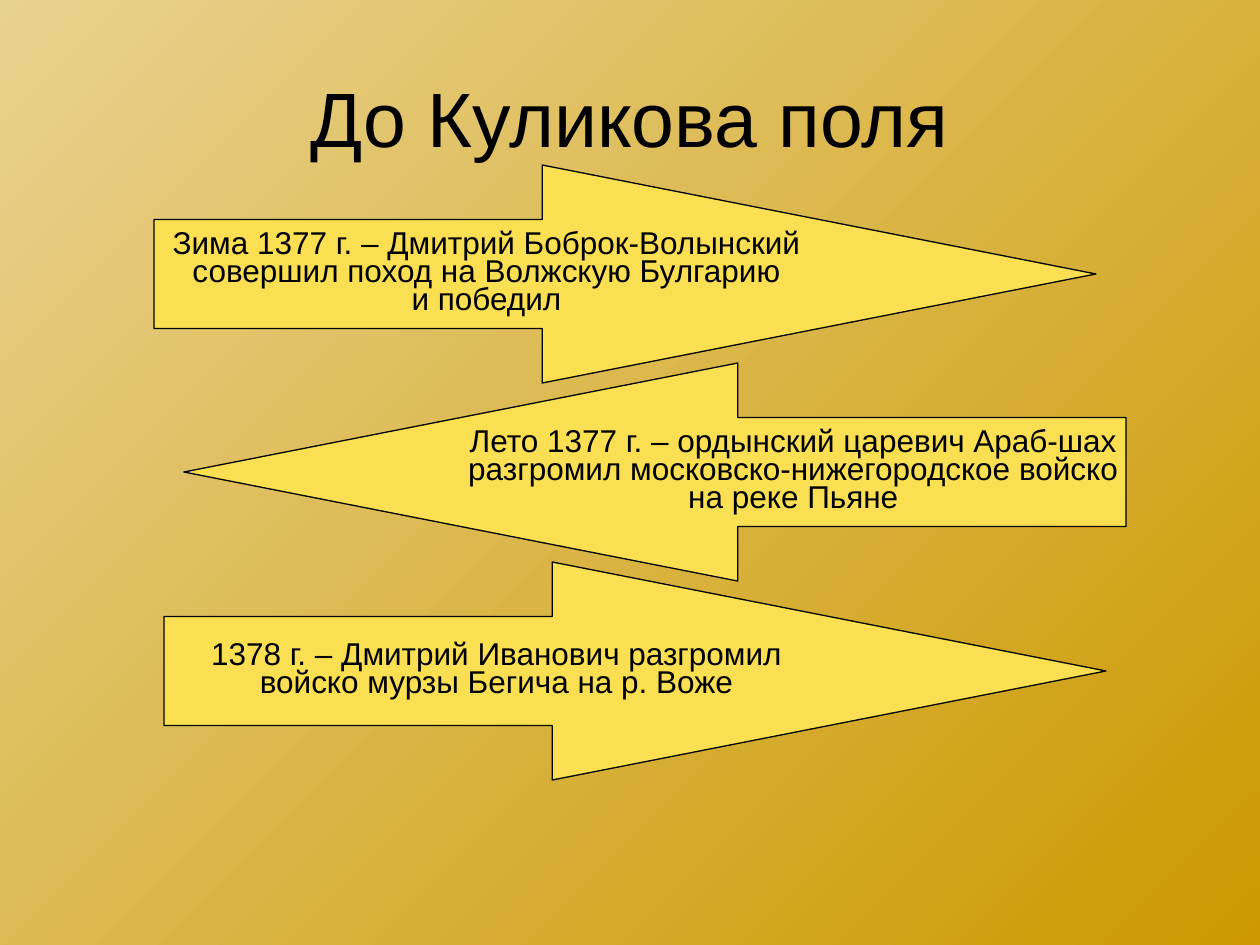
from dataclasses import dataclass

from pptx import Presentation
from pptx.dml.color import RGBColor
from pptx.enum.shapes import MSO_SHAPE
from pptx.enum.text import MSO_ANCHOR, PP_ALIGN
from pptx.util import Emu, Pt

EMU_PER_PX = 914400 / 126
FONT = "Arial"
BLACK = RGBColor(0x00, 0x00, 0x00)
YELLOW = RGBColor(0xFB, 0xDF, 0x53)
PALE_GOLD = RGBColor(0xE9, 0xD2, 0x8F)
DARK_GOLD = RGBColor(0xCC, 0x99, 0x00)

ARROW_W, ARROW_H = 942, 218
SHAFT_RATIO, HEAD_RATIO = 0.5, 2.54


@dataclass(frozen=True)
class EventArrow:
    left: int
    top: int
    lines: tuple[str, ...]
    points_left: bool = False


EVENTS = (
    EventArrow(154, 165, (
        "Зима 1377 г. – Дмитрий Боброк-Волынский",
        "совершил поход на Волжскую Булгарию",
        "и победил",
    )),
    EventArrow(184, 363, (
        "Лето 1377 г. – ордынский царевич Араб-шах",
        "разгромил московско-нижегородское войско",
        "на реке Пьяне",
    ), points_left=True),
    EventArrow(164, 562, (
        "1378 г. – Дмитрий Иванович разгромил",
        "войско мурзы Бегича на р. Воже",
    )),
)


def px(n: int) -> Emu:
    return Emu(round(n * EMU_PER_PX))


def write_text(sp, lines: tuple[str, ...], *, size: int,
               spacing: float = 1.0, wrap: bool = True) -> None:
    """Fill a shape with centred paragraphs, one for each line."""
    tf = sp.text_frame
    tf.word_wrap = wrap
    tf.vertical_anchor = MSO_ANCHOR.MIDDLE
    for i, line in enumerate(lines):
        p = tf.add_paragraph() if i else tf.paragraphs[0]
        p.alignment = PP_ALIGN.CENTER
        p.line_spacing = spacing
        r = p.add_run()
        r.text = line
        r.font.name = FONT
        r.font.size = Pt(size)
        r.font.color.rgb = BLACK


def paint_background(s) -> None:
    fill = s.background.fill
    fill.gradient()
    fill.gradient_angle = 315
    for stop, color in zip(fill.gradient_stops, (PALE_GOLD, DARK_GOLD)):
        stop.color.rgb = color


def add_title(s, text: str) -> None:
    title = s.shapes.title
    title.left, title.top = px(63), px(38)
    title.width, title.height = px(1134), px(157)
    write_text(title, (text,), size=44)


def add_event(s, event: EventArrow) -> None:
    sp = s.shapes.add_shape(MSO_SHAPE.RIGHT_ARROW, px(event.left), px(event.top),
                            px(ARROW_W), px(ARROW_H))
    sp.adjustments[0] = SHAFT_RATIO
    sp.adjustments[1] = HEAD_RATIO
    if event.points_left:
        sp._element.spPr.xfrm.set("flipH", "1")
    sp.shadow.inherit = False
    sp.fill.solid()
    sp.fill.fore_color.rgb = YELLOW
    sp.line.color.rgb = BLACK
    sp.line.width = Pt(0.75)
    write_text(sp, event.lines, size=18, spacing=0.75, wrap=False)


def main() -> None:
    prs = Presentation()
    prs.slide_width, prs.slide_height = px(1260), px(945)
    s = prs.slides.add_slide(prs.slide_layouts[5])
    paint_background(s)
    add_title(s, "До Куликова поля")
    for event in EVENTS:
        add_event(s, event)
    prs.save("out.pptx")


if __name__ == "__main__":
    main()
